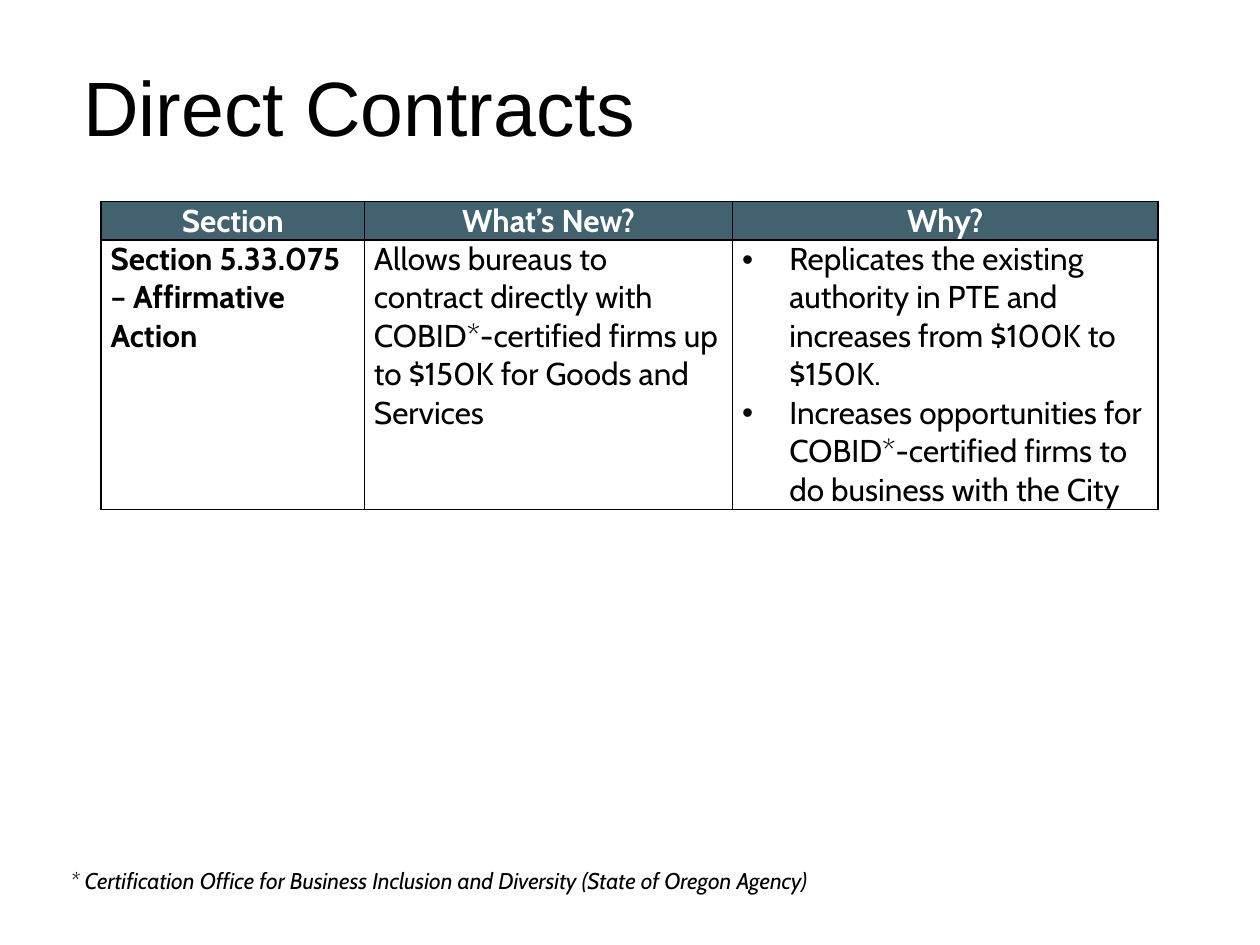
from pptx import Presentation
from pptx.dml.color import RGBColor
from pptx.enum.text import MSO_ANCHOR, MSO_AUTO_SIZE, PP_ALIGN
from pptx.oxml.ns import qn
from pptx.util import Pt
from lxml import etree

TOP = MSO_ANCHOR.TOP
LEFT, CENTER = PP_ALIGN.LEFT, PP_ALIGN.CENTER
NO_FIT = MSO_AUTO_SIZE.NONE
GROW = MSO_AUTO_SIZE.SHAPE_TO_FIT_TEXT
HUES = {"ink": "000000", "head": "032E41", "white": "FFFFFF"}
HEADS = ["Section", "What’s New?", "Why?"]
BODY = [
    ["Section 5.33.075 – Affirmative Action"],
    ["Allows bureaus to contract directly with COBID*-certified firms "
     "up to $150K for Goods and Services"],
    ["Replicates the existing authority in PTE and increases from "
     "$100K to $150K.",
     "Increases opportunities for COBID*-certified firms to do business "
     "with the City"],
]


def add(parent, tag, **attrs):
    return etree.SubElement(parent, qn(tag), **attrs)


class Deck:
    def __init__(self, slide, face="Cabin"):
        self.slide = slide
        self.face = face

    def style(self, para, size, hue="ink", face=None, bold=False, italic=False):
        font = para.font
        font.name, font.size = face or self.face, Pt(size)
        font.bold, font.italic = bold, italic
        font.color.rgb = RGBColor.from_string(HUES[hue])

    def title(self, text, left, top, width, height):
        box = self.slide.shapes.title
        box.left, box.top = Pt(left), Pt(top)
        box.width, box.height = Pt(width), Pt(height)
        frame = box.text_frame
        frame.text = text
        frame.auto_size = NO_FIT
        frame.vertical_anchor = TOP
        para = frame.paragraphs[0]
        para.alignment, para.line_spacing = LEFT, 0.89
        self.style(para, 44, face="Arial")

    def note(self, text, left, top, width, height):
        box = self.slide.shapes.add_textbox(
            Pt(left), Pt(top), Pt(width), Pt(height))
        frame = box.text_frame
        frame.word_wrap = True
        frame.auto_size = GROW
        frame.text = text
        self.style(frame.paragraphs[0], 13, italic=True)

    def table(self, left, top, widths, heights):
        shape = self.slide.shapes.add_table(
            len(heights), len(widths), Pt(left), Pt(top),
            Pt(sum(widths)), Pt(sum(heights)))
        grid = shape.table
        grid.first_row = grid.horz_banding = False
        for col, width in zip(grid.columns, widths):
            col.width = Pt(width)
        for row, height in zip(grid.rows, heights):
            row.height = Pt(height)
        return grid

    def cell(self, cell, lines, head=False, bold=False, dots=False):
        cell.margin_left = cell.margin_right = Pt(5.4)
        cell.margin_top = cell.margin_bottom = 0
        cell.vertical_anchor = TOP
        self.edges(cell)
        if head:
            cell.fill.solid()
            cell.fill.fore_color.rgb = RGBColor.from_string(HUES["head"])
            tint = cell._tc.tcPr.find(qn("a:solidFill")).find(qn("a:srgbClr"))
            add(tint, "a:alpha", val="75000")
        else:
            cell.fill.background()
        cell.text_frame.text = "\n".join(lines)
        for para in cell.text_frame.paragraphs:
            para.alignment = CENTER if head else LEFT
            if dots:
                self.dot(para)
            self.style(para, 18, "white" if head else "ink", bold=bold)

    def edges(self, cell):
        props = cell._tc.get_or_add_tcPr()
        for side in "LRTB":
            line = add(props, f"a:ln{side}", w=str(Pt(1)))
            add(add(line, "a:solidFill"), "a:srgbClr", val=HUES["ink"])

    def dot(self, para):
        props = para._p.get_or_add_pPr()
        props.set("marL", str(Pt(27)))
        props.set("indent", str(Pt(-27)))
        add(props, "a:buFont", typeface="Arial")
        add(props, "a:buChar", char="•")


def main():
    prs = Presentation()
    prs.slide_width, prs.slide_height = Pt(720), Pt(540)
    deck = Deck(prs.slides.add_slide(prs.slide_layouts[5]))

    # Title
    deck.title("Direct Contracts", 40.3, 36.7, 597, 78.5)

    # Table of changes
    grid = deck.table(57.8, 115.2, [150.5, 210.4, 243], [22, 154])
    for col, (name, lines) in enumerate(zip(HEADS, BODY)):
        deck.cell(grid.cell(0, col), [name], head=True, bold=True)
        deck.cell(grid.cell(1, col), lines, bold=col == 0, dots=col == 2)

    # Footnote
    deck.note("* Certification Office for Business Inclusion and Diversity "
              "(State of Oregon Agency)", 33.2, 491.8, 486, 23)

    prs.save("out.pptx")


if __name__ == "__main__":
    main()
